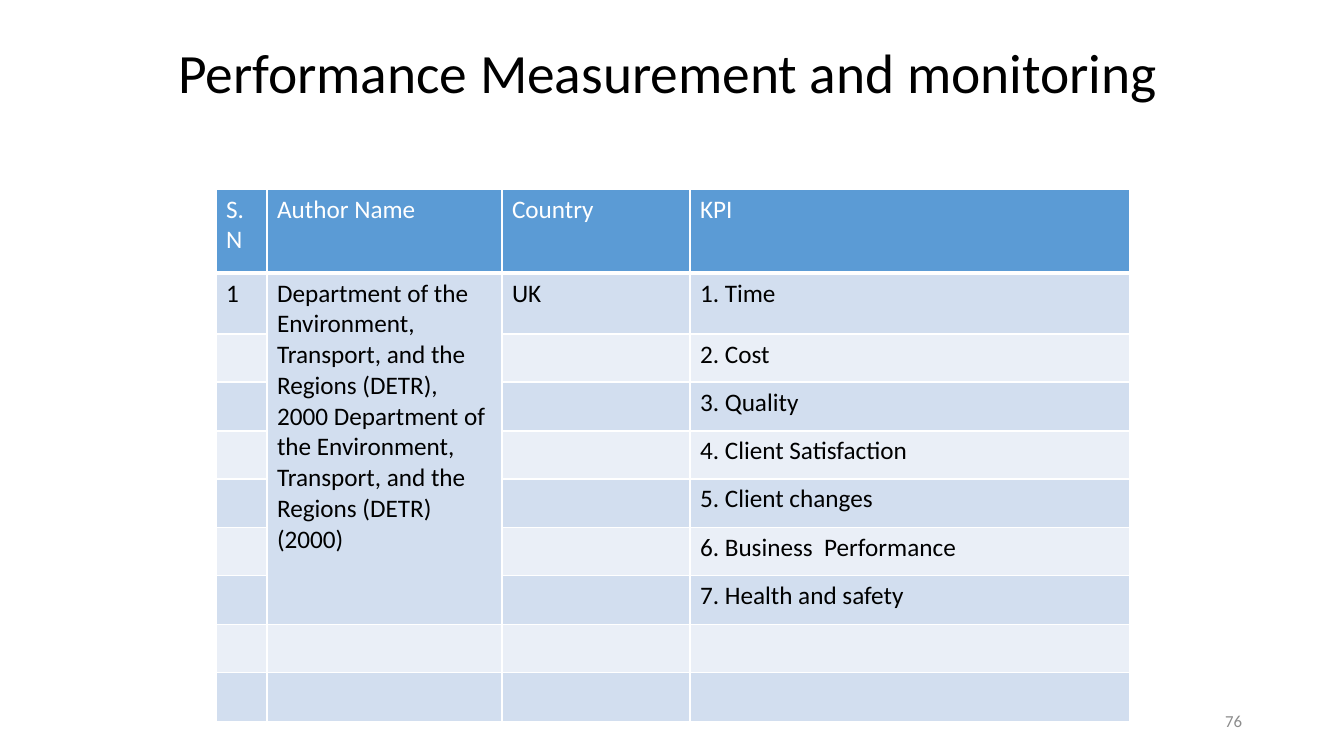
from lxml.etree import SubElement as Sub
from pptx import Presentation
from pptx.dml.color import RGBColor as RGB
from pptx.enum.text import MSO_ANCHOR as ANCHOR, MSO_AUTO_SIZE as FIT, PP_ALIGN as ALIGN
from pptx.oxml.ns import qn
from pptx.util import Pt

PX = 914400 / 100.8  # EMU in one px
BLACK = RGB(0x00, 0x00, 0x00)
WHITE = RGB(0xFF, 0xFF, 0xFF)
GREY = RGB(0x8C, 0x8C, 0x8C)
BLUE = RGB(0x5B, 0x9B, 0xD5)
BANDS = RGB(0xD2, 0xDE, 0xEF), RGB(0xEA, 0xEF, 0xF7)

COLUMNS = [51, 235, 188, 440]
ROWS = [84, 61] + [48, 49] * 4
HEADINGS = ["S.N", "Author Name", "Country", "KPI"]
AUTHOR = ("Department of the Environment, Transport, and the Regions (DETR), "
          "2000 Department of the Environment, Transport, and the Regions (DETR) (2000)")
KPIS = ["Time", "Cost", "Quality", "Client Satisfaction", "Client changes",
        "Business  Performance", "Health and safety"]


def emu(px):
    return round(px * PX)


class Deck:
    font = "Calibri"

    def __init__(self, width, height):
        self.prs = Presentation()
        self.prs.slide_width, self.prs.slide_height = emu(width), emu(height)
        self.s = self.prs.slides.add_slide(self.prs.slide_layouts[5])

    def add_text(self, tf, text, size, color, align=ALIGN.LEFT):
        p = tf.paragraphs[0]
        p.alignment = align
        r = p.add_run()
        r.text = text
        r.font.name, r.font.size = self.font, Pt(size)
        r.font.bold = False
        r.font.color.rgb = color
        return p

    def title(self, text, x, y, w, h):
        sp = self.s.shapes.title
        sp.left, sp.top, sp.width, sp.height = map(emu, (x, y, w, h))
        tf = sp.text_frame
        tf.auto_size, tf.vertical_anchor = FIT.NONE, ANCHOR.MIDDLE
        self.add_text(tf, text, 39.6, BLACK).line_spacing = 0.9

    def page_number(self, text, x, y, w, h):
        tf = self.s.shapes.add_textbox(*map(emu, (x, y, w, h))).text_frame
        tf.word_wrap, tf.vertical_anchor = True, ANCHOR.MIDDLE
        self.add_text(tf, text, 12, GREY, ALIGN.RIGHT)

    def border(self, cell, bottom):
        tcPr = cell._tc.get_or_add_tcPr()
        for side, width in (("L", 1), ("R", 1), ("T", 1), ("B", bottom)):
            ln = Sub(tcPr, qn("a:ln" + side), w=str(Pt(width)))
            Sub(Sub(ln, qn("a:solidFill")), qn("a:srgbClr"), val=str(WHITE))

    def table(self, x, y, columns, rows, texts, merge):
        box = map(emu, (x, y, sum(columns), sum(rows)))
        table = self.s.shapes.add_table(len(rows), len(columns), *box).table
        for column, width in zip(table.columns, columns):
            column.width = emu(width)
        for row, height in zip(table.rows, rows):
            row.height = emu(height)
        first, last = merge
        table.cell(*first).merge(table.cell(*last))
        for i in range(len(rows)):
            for j in range(len(columns)):
                cell = table.cell(i, j)
                if i == 0:
                    self.border(cell, 3)
                cell.fill.solid()
                cell.fill.fore_color.rgb = BANDS[(i - 1) % 2] if i else BLUE
                if (i, j) in texts:
                    self.add_text(cell.text_frame, texts[i, j], 18, BLACK if i else WHITE)


def main():
    deck = Deck(1344, 756)
    deck.title("Performance Measurement and monitoring", 168, 25, 1008, 101)

    # Indicator table: headings, one author, numbered indicators
    texts = {(0, j): heading for j, heading in enumerate(HEADINGS)}
    texts.update({(1, 0): "1", (1, 1): AUTHOR, (1, 2): "UK"})
    texts.update({(i, 3): f"{i}. {kpi}" for i, kpi in enumerate(KPIS, 1)})
    deck.table(216, 189, COLUMNS, ROWS, texts, ((1, 1), (len(KPIS), 1)))

    # Page number
    deck.page_number("76", 950, 701, 302, 40)
    deck.prs.save("out.pptx")


if __name__ == "__main__":
    main()
